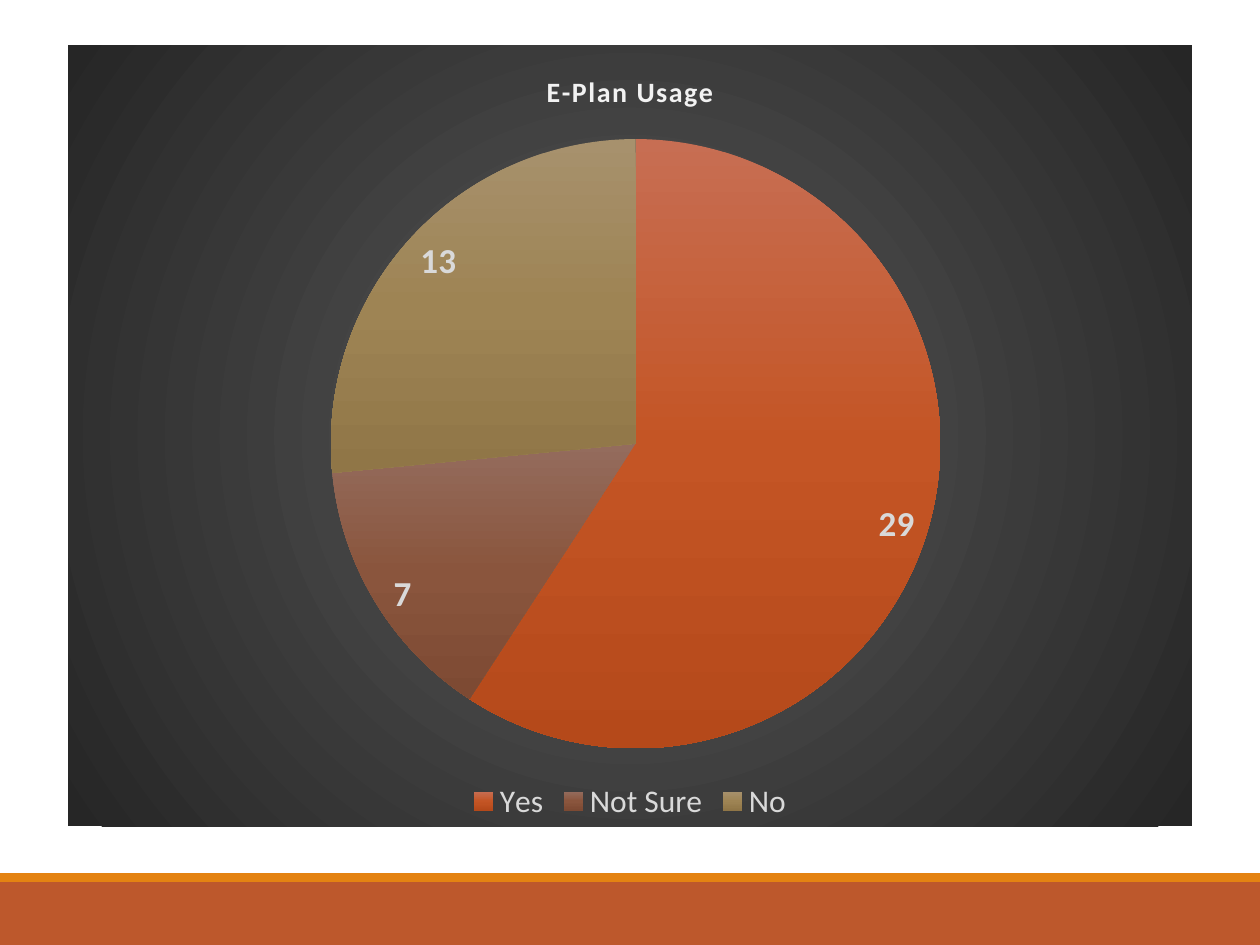
from lxml.etree import fromstring
from pptx import Presentation
from pptx.chart.data import CategoryChartData
from pptx.dml.color import RGBColor
from pptx.enum.chart import XL_CHART_TYPE, XL_LABEL_POSITION, XL_LEGEND_POSITION
from pptx.enum.shapes import MSO_SHAPE
from pptx.oxml.ns import nsdecls
from pptx.util import Inches, Pt

THEME = {
    "bands": {"footer": "BD582C", "stripe": "E48312"},
    "backdrop": ("595959", "262626"),
    "slices": {
        "E-Plan Usage": ("ED914C", "EF8407", "DB7600"),
        "Yes": ("C76E53", "C45525", "B5491A"),
        "Not Sure": ("946C5D", "8A553D", "7D4A33"),
        "No": ("A7916D", "9E8454", "907647"),
    },
    "fonts": {
        "base": {"name": "Calibri", "size": Pt(10), "color": "000000"},
        "title": {"name": "Calibri", "size": Pt(16), "bold": True, "color": "F2F2F2"},
        "legend": {"name": "Calibri", "size": Pt(18), "bold": False, "color": "D9D9D9"},
        "labels": {"name": "Calibri", "size": Pt(20), "bold": True, "color": "D9D9D9"},
    },
}


def format_font(font, role):
    for attribute, value in THEME["fonts"][role].items():
        if attribute == "color":
            font.color.rgb = RGBColor.from_string(value)
        else:
            setattr(font, attribute, value)


def gradient(colors, direction):
    """Return a gradFill element with evenly spaced stops."""
    step = 100000 // (len(colors) - 1)
    stops = "".join(
        f'<a:gs pos="{i * step}"><a:srgbClr val="{color}"/></a:gs>'
        for i, color in enumerate(colors)
    )
    return f"<a:gradFill><a:gsLst>{stops}</a:gsLst>{direction}</a:gradFill>"


prs = Presentation()
prs.slide_width, prs.slide_height = Inches(10), Inches(7.5)
slide = prs.slides.add_slide(prs.slide_layouts[6])

# Footer bands
for band, top, height in (("footer", 7, 0.5), ("stripe", 6.93, 0.07)):
    bar = slide.shapes.add_shape(
        MSO_SHAPE.RECTANGLE, 0, Inches(top), prs.slide_width, Inches(height)
    )
    bar.shadow.inherit = False
    bar.fill.solid()
    bar.fill.fore_color.rgb = RGBColor.from_string(THEME["bands"][band])
    bar.line.fill.background()

# Pie of answers; the first category is a heading without a value
answers = CategoryChartData()
answers.categories = list(THEME["slices"])
answers.add_series("Series 1", (None, 29, 7, 13))
chart = slide.shapes.add_chart(
    XL_CHART_TYPE.PIE, Inches(0.54), Inches(0.36), Inches(8.92), Inches(6.2), answers
).chart
format_font(chart.font, "base")

chart.has_title = True
title = chart.chart_title.text_frame.paragraphs[0].add_run()
title.text = "E-Plan Usage"
format_font(title.font, "title")
title.font._element.set("spc", "100")

chart.has_legend = True
legend = chart.legend
legend.position = XL_LEGEND_POSITION.BOTTOM
legend.include_in_layout = False
format_font(legend.font, "legend")
legend._element.find("{*}legendPos").addnext(fromstring(
    f'<c:legendEntry {nsdecls("c")}><c:idx val="0"/><c:delete val="1"/></c:legendEntry>'
))

pie = chart.plots[0]
pie.vary_by_categories = True
pie.has_data_labels = True
labels = pie.data_labels
labels.show_value = True
labels.show_percentage = False
labels.position = XL_LABEL_POSITION.BEST_FIT
format_font(labels.font, "labels")

slices = pie.series[0]._element
for i, colors in enumerate(THEME["slices"].values()):
    fill = gradient(colors, '<a:lin ang="5400000" scaled="0"/>')
    properties = slices.get_or_add_dPt_for_point(i).get_or_add_spPr()
    properties.extend(fromstring(
        f'<c:spPr {nsdecls("c", "a")}>{fill}<a:ln><a:noFill/></a:ln></c:spPr>'
    ))

# Dark backdrop, lighter at the centre
center = '<a:path path="circle"><a:fillToRect l="50000" t="50000" r="50000" b="50000"/></a:path>'
chart._chartSpace.chart.addnext(fromstring(
    f'<c:spPr {nsdecls("c", "a")}>{gradient(THEME["backdrop"], center)}'
    "<a:ln><a:noFill/></a:ln></c:spPr>"
))

# Place the circle inside the backdrop
plot_area = chart._chartSpace.chart.plotArea
for layout in plot_area.findall("{*}layout"):
    plot_area.remove(layout)
frame = {"x": 0.23, "y": 0.12, "w": 0.55, "h": 0.78}
plot_area.insert(0, fromstring(
    f'<c:layout {nsdecls("c")}><c:manualLayout><c:layoutTarget val="inner"/>'
    '<c:xMode val="edge"/><c:yMode val="edge"/>'
    + "".join(f'<c:{side} val="{share}"/>' for side, share in frame.items())
    + "</c:manualLayout></c:layout>"
))

prs.save("out.pptx")
